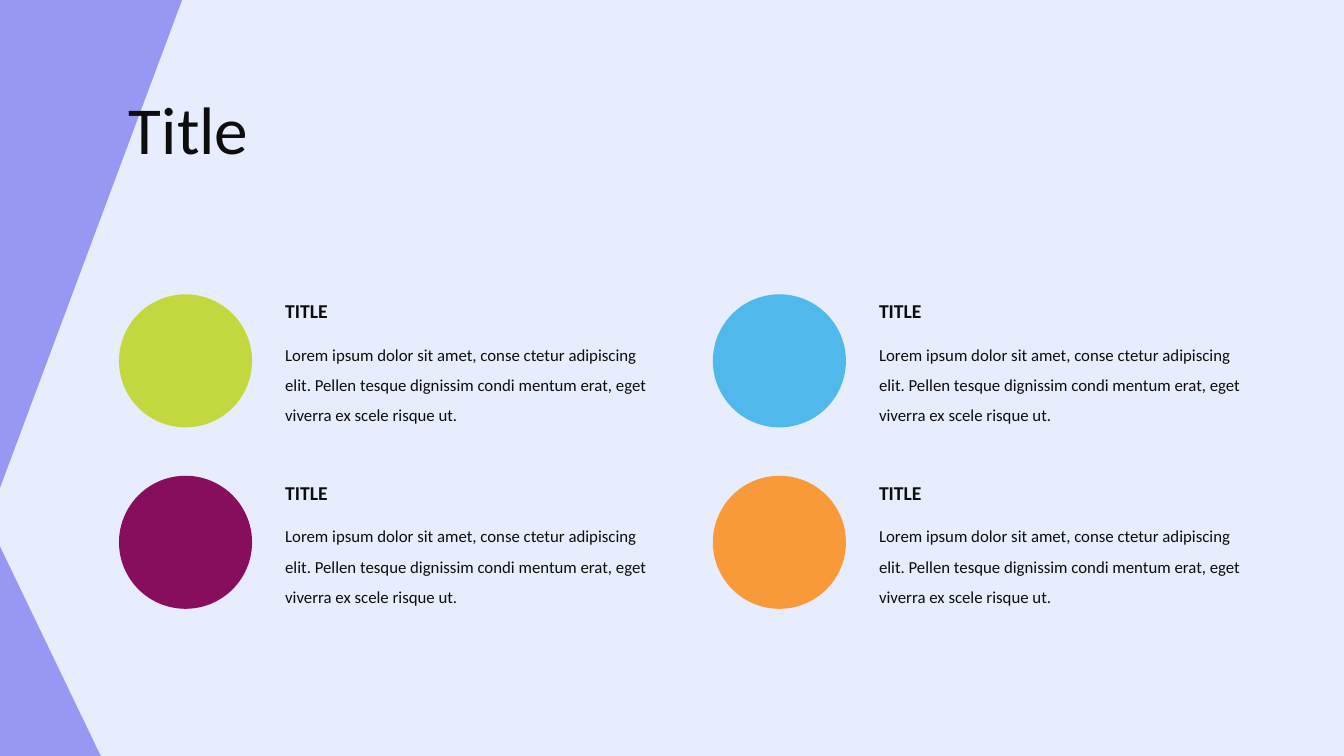
"""Build a title slide with four coloured circles, each beside a heading and text."""
from pptx import Presentation
from pptx import util as u
from pptx.dml.color import RGBColor
from pptx.enum import shapes, text

TITLE = "Title"
LOREM = ("Lorem ipsum dolor sit amet, conse ctetur adipiscing elit. Pellen tesque "
         "dignissim condi mentum erat, eget viverra ex scele risque ut.")
ITEMS = [
    ("TITLE", LOREM, "C3D83F"),
    ("TITLE", LOREM, "870E5D"),
    ("TITLE", LOREM, "51B8EB"),
    ("TITLE", LOREM, "F89A3A"),
]
THEME = {
    "font": "Calibri", "ink": "0D0D0D", "background": "E7EDFD", "accent": "9898F4",
    "title": 48, "heading": 14, "body": 12,
}
ROWS = 2
LEFT, TOP = 1.18, 2.92
COLUMN_STEP, ROW_STEP = 5.89, 1.8
CIRCLE, TEXT_OFFSET, BODY_OFFSET = 1.32, 1.55, 0.35


def add_filled(page, kind, area, color):
    shape = page.shapes.add_shape(kind, *map(u.Inches, area))
    shape.shadow.inherit = False
    shape.fill.solid()
    shape.fill.fore_color.rgb = RGBColor.from_string(color)
    shape.line.fill.background()
    return shape


def add_text(page, words, area, size, bold=False, spacing=None):
    frame = page.shapes.add_textbox(*map(u.Inches, area)).text_frame
    frame.word_wrap = True
    frame.auto_size = text.MSO_AUTO_SIZE.SHAPE_TO_FIT_TEXT
    frame.text = words
    para = frame.paragraphs[0]
    para.line_spacing = spacing
    font = para.runs[0].font
    font.name = THEME["font"]
    font.size = u.Pt(THEME[size])
    font.bold = bold
    font.color.rgb = RGBColor.from_string(THEME["ink"])


def add_item(page, index, heading, body, color):
    column, row = divmod(index, ROWS)
    left, top = LEFT + column * COLUMN_STEP, TOP + row * ROW_STEP
    text_left = left + TEXT_OFFSET
    add_filled(page, shapes.MSO_SHAPE.OVAL, (left, top, CIRCLE, CIRCLE), color)
    add_text(page, heading, (text_left, top, 1.46, 0.34), "heading", bold=True)
    add_text(page, body, (text_left, top + BODY_OFFSET, 3.94, 1.01), "body", spacing=1.5)


def main():
    deck = Presentation()
    deck.slide_width, deck.slide_height = u.Inches(13.33), u.Inches(7.5)
    page = deck.slides.add_slide(deck.slide_layouts[6])
    page.background.fill.solid()
    page.background.fill.fore_color.rgb = RGBColor.from_string(THEME["background"])

    triangle = shapes.MSO_SHAPE.RIGHT_TRIANGLE
    add_filled(page, triangle, (0, 5.42, 1, 2.08), THEME["accent"])
    upper = add_filled(page, triangle, (0, -0.01, 1.81, 4.85), THEME["accent"])
    upper.element.spPr.xfrm.set("flipV", "1")

    add_text(page, TITLE, (LEFT, 0.82, 3.29, 0.91), "title")
    for index, item in enumerate(ITEMS):
        add_item(page, index, *item)
    deck.save("out.pptx")


if __name__ == "__main__":
    main()
